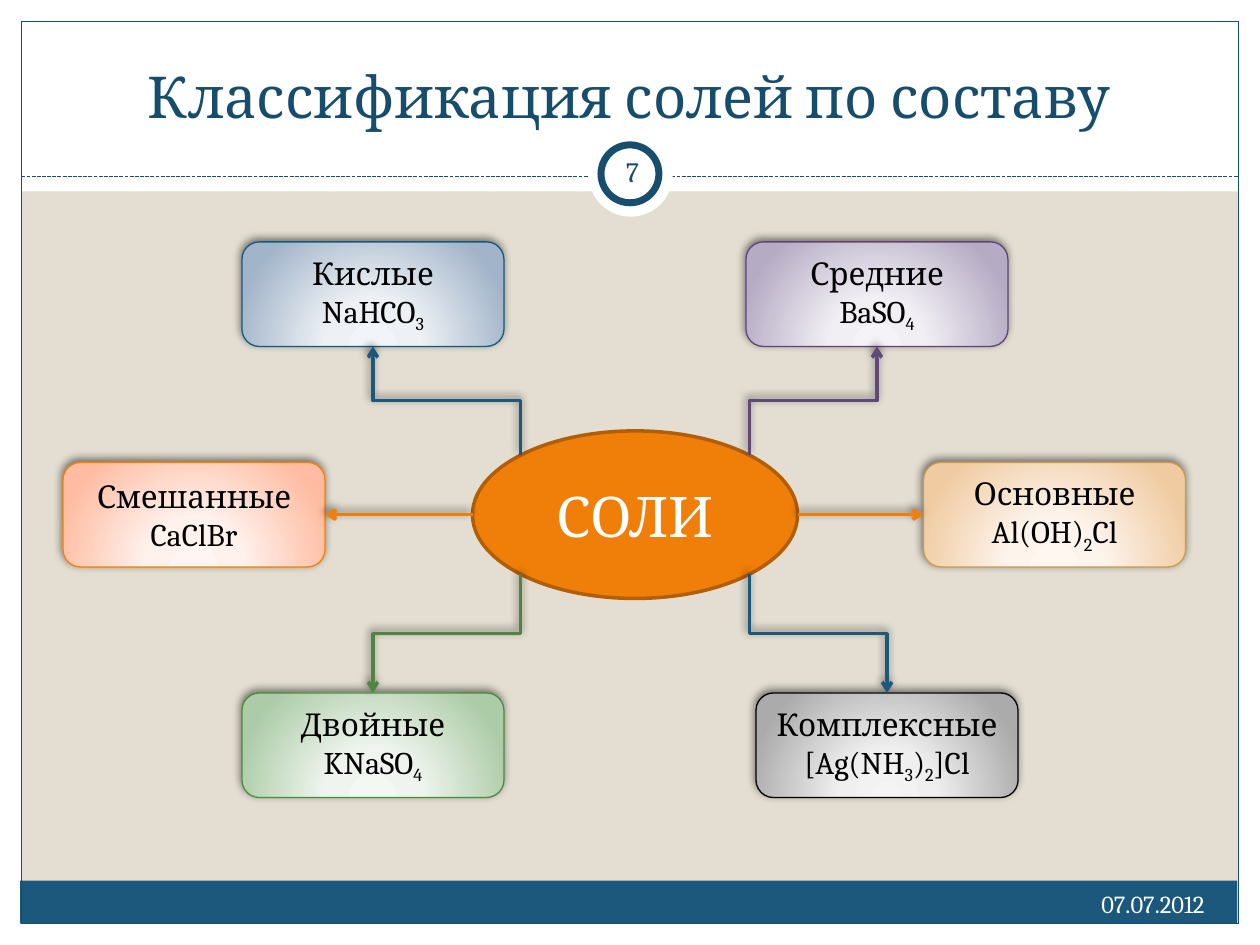
from lxml import etree
from pptx import Presentation
from pptx import util as u
from pptx.dml.color import RGBColor
from pptx.enum import dml, shapes, text
from pptx.oxml import parse_xml
from pptx.oxml.ns import nsdecls, qn

FONT = "Cambria"
COLORS = {
    "background": "E3DED1", "white": "FFFFFF", "black": "000000",
    "title": "164C6C", "frame": "184E6D", "blue": "1B587C",
    "orange": "F07F09", "dark orange": "B25E07",
    "purple": "604878", "green": "4E8542",
}
TITLE = "Классификация солей по составу"
DATE = "07.07.2012"
NUMBER = "7"
CENTER = "СОЛИ"

# Name, formula as (text, is subscript), left, top, border, gradient stops, arrow start, arrow colour
SALTS = [
    ("Кислые", [("NaHCO", False), ("3", True)], 1.92, 1.92,
     "115A86", ("F1F4F8", "EDF1F5", "A2B4C9"), (4.13, 3.61), "blue"),
    ("Смешанные", [("CaClBr", False)], 0.5, 3.67,
     "F97F00", ("FFF5F2", "FFF2ED", "FFBCA2"), (3.75, 4.085), "orange"),
    ("Двойные", [("KNaSO", False), ("4", True)], 1.92, 5.5,
     "4A8C3B", ("F3F8F2", "EFF5EE", "ACCBA7"), (4.13, 4.56), "green"),
    ("Средние", [("BaSO", False), ("4", True)], 5.92, 1.92,
     "60437D", ("F5F3F7", "F1EFF4", "B6ABC4"), (5.95, 3.61), "purple"),
    ("Основные", [("Al(OH)", False), ("2", True), ("Cl", False)], 7.33, 3.67,
     "CB9A4F", ("FFF7F0", "FDF4EC", "F0CBA1"), (6.33, 4.085), "orange"),
    ("Комплексные", [("[Ag(NH", False), ("3", True), (")", False), ("2", True), ("]Cl", False)],
     6, 5.5, "000000", ("F4F4F4", "EFEFEF", "ABABAB"), (5.95, 4.56), "blue"),
]
BOX_WIDTH, BOX_HEIGHT = 2.08, 0.83
STOPS = (0, 34, 100)
CENTER_TOP, CENTER_BOTTOM = 3.42, 4.75


def rgb(color):
    return RGBColor.from_string(COLORS.get(color, color))


def inches(*values):
    return [u.Inches(value) for value in values]


def add_text(paragraph, content, size=18, color="black", align="CENTER", subscript=False):
    paragraph.alignment = getattr(text.PP_ALIGN, align)
    run = paragraph.add_run()
    run.text = content
    run.font.name, run.font.size = FONT, u.Pt(size)
    run.font.color.rgb = rgb(color)
    if subscript:
        run.font._element.set("baseline", "-25000")


def add_shape(slide, kind, place, fill=None, line=None, width=0.75):
    shape = slide.shapes.add_shape(getattr(shapes.MSO_SHAPE, kind), *inches(*place))
    shape.shadow.inherit = False
    if fill:
        shape.fill.solid()
        shape.fill.fore_color.rgb = rgb(fill)
    else:
        shape.fill.background()
    if line:
        shape.line.color.rgb = rgb(line)
        shape.line.width = u.Pt(width)
    else:
        shape.line.fill.background()
    return shape


def add_text_box(slide, place, content, margin=None, **style):
    frame = slide.shapes.add_textbox(*inches(*place)).text_frame
    frame.word_wrap = True
    if margin is not None:
        frame.margin_left = frame.margin_right = u.Inches(margin)
        frame.margin_top = frame.margin_bottom = u.Inches(margin)
        frame.vertical_anchor = text.MSO_ANCHOR.MIDDLE
    add_text(frame.paragraphs[0], content, **style)


def add_soft_shadow(item):
    properties = item._element.spPr
    for old in properties.findall(qn("a:effectLst")):
        properties.remove(old)
    properties.append(parse_xml(
        f'<a:effectLst {nsdecls("a")}><a:outerShdw blurRad="{u.Pt(5)}" dist="{u.Pt(2)}" '
        f'dir="{245 * 60000}" rotWithShape="0"><a:srgbClr val="000000"><a:alpha val="50000"/>'
        '</a:srgbClr></a:outerShdw></a:effectLst>'))


def set_radial_fill(shape, colors):
    """Shade the shape with a circle centred below its lower edge."""
    stops = "".join(f'<a:gs pos="{stop * 1000}"><a:srgbClr val="{color}"/></a:gs>'
                    for stop, color in zip(STOPS, colors))
    gradient = parse_xml(
        f'<a:gradFill {nsdecls("a")} rotWithShape="1"><a:gsLst>{stops}</a:gsLst>'
        '<a:path path="circle"><a:fillToRect l="50000" t="155000" r="50000" b="-55000"/>'
        '</a:path></a:gradFill>')
    properties = shape._element.spPr
    properties.replace(properties.find(qn("a:noFill")), gradient)


def add_line(slide, start, end, color, width, kind="STRAIGHT"):
    line = slide.shapes.add_connector(getattr(shapes.MSO_CONNECTOR, kind), *inches(*start, *end))
    line.line.color.rgb = rgb(color)
    line.line.width = u.Pt(width)
    etree.SubElement(line._element.spPr, qn("a:effectLst"))
    return line


def add_vertical_elbow(slide, start, end, color):
    """Elbow that leaves and arrives vertically: a horizontal one turned a quarter."""
    (x1, y1), (x2, y2) = start, end
    middle_x, middle_y = (x1 + x2) / 2, (y1 + y2) / 2
    half_width, half_height = abs(y2 - y1) / 2, abs(x2 - x1) / 2
    if (x2 > x1) == (y2 > y1):
        half_height = -half_height
    elbow = add_line(slide, (middle_x - half_width, middle_y - half_height),
                     (middle_x + half_width, middle_y + half_height), color, 2, "ELBOW")
    angle = 90 if y2 > y1 else 270
    elbow._element.spPr.find(qn("a:xfrm")).set("rot", str(angle * 60000))
    return elbow


def add_arrow(slide, start, box, left, top, color):
    middle = left + BOX_WIDTH / 2
    if top > CENTER_BOTTOM:
        arrow = add_vertical_elbow(slide, start, (middle, top), color)
    elif top + BOX_HEIGHT < CENTER_TOP:
        arrow = add_vertical_elbow(slide, start, (middle, top + BOX_HEIGHT), color)
    else:
        on_left = left < start[0]
        edge = left + BOX_WIDTH if on_left else left
        arrow = add_line(slide, start, (edge, start[1]), color, 2)
        arrow.end_connect(box, 3 if on_left else 1)
    etree.SubElement(arrow.line._get_or_add_ln(), qn("a:tailEnd"), type="arrow")
    add_soft_shadow(arrow)


def add_salt(slide, name, formula, left, top, border, gradient):
    box = add_shape(slide, "ROUNDED_RECTANGLE", (left, top, BOX_WIDTH, BOX_HEIGHT), line=border)
    set_radial_fill(box, gradient)
    add_soft_shadow(box)
    frame = box.text_frame
    frame.vertical_anchor = text.MSO_ANCHOR.MIDDLE
    add_text(frame.paragraphs[0], name)
    paragraph = frame.add_paragraph()
    for part, subscript in formula:
        add_text(paragraph, part, subscript=subscript)
    return box


def add_frame(slide):
    margins = [(0, 7.33, 10, 0.17), (0, 0, 10, 1.52), (0, 0, 0.17, 7.5), (9.83, 0, 0.17, 7.5)]
    for place in margins:
        add_shape(slide, "RECTANGLE", place, fill="white")
    add_shape(slide, "RECTANGLE", (0.16, 6.99, 9.66, 0.34), fill="blue")
    add_shape(slide, "RECTANGLE", (0.17, 0.17, 9.66, 7.16), line="frame")
    divider = add_line(slide, (0.17, 1.4), (9.83, 1.4), "frame", 0.75)
    divider.line.dash_style = dml.MSO_LINE.SQUARE_DOT
    add_shape(slide, "OVAL", (4.67, 1.05, 0.67, 0.67), fill="white")
    add_shape(slide, "OVAL", (4.77, 1.15, 0.46, 0.46), fill="white", line="frame", width=4)


def add_title(slide):
    title = slide.shapes.title
    title.left, title.top, title.width, title.height = inches(0.33, 0.25, 9.33, 0.83)
    frame = title.text_frame
    frame.auto_size = text.MSO_AUTO_SIZE.NONE
    frame.vertical_anchor = text.MSO_ANCHOR.BOTTOM
    add_text(frame.paragraphs[0], TITLE, size=33, color="title")
    slide.shapes._spTree.append(title._element)  # in front of the white band


def main():
    presentation = Presentation()
    presentation.slide_width, presentation.slide_height = inches(10, 7.5)
    slide = presentation.slides.add_slide(presentation.slide_layouts[5])
    slide.background.fill.solid()
    slide.background.fill.fore_color.rgb = rgb("background")

    add_frame(slide)
    add_title(slide)
    add_text_box(slide, (6.33, 7.01, 3.33, 0.4), DATE, size=14, color="white", align="RIGHT")
    add_text_box(slide, (4.77, 1.12, 0.5, 0.48), NUMBER, margin=0.05, size=16, color="frame")

    center = add_shape(slide, "OVAL", (3.75, CENTER_TOP, 2.58, CENTER_BOTTOM - CENTER_TOP),
                       fill="orange", line="dark orange", width=2)
    center.text_frame.vertical_anchor = text.MSO_ANCHOR.MIDDLE
    add_text(center.text_frame.paragraphs[0], CENTER, size=32, color="white")

    for name, formula, left, top, border, gradient, start, color in SALTS:
        box = add_salt(slide, name, formula, left, top, border, gradient)
        add_arrow(slide, start, box, left, top, color)
    presentation.save("out.pptx")


if __name__ == "__main__":
    main()
